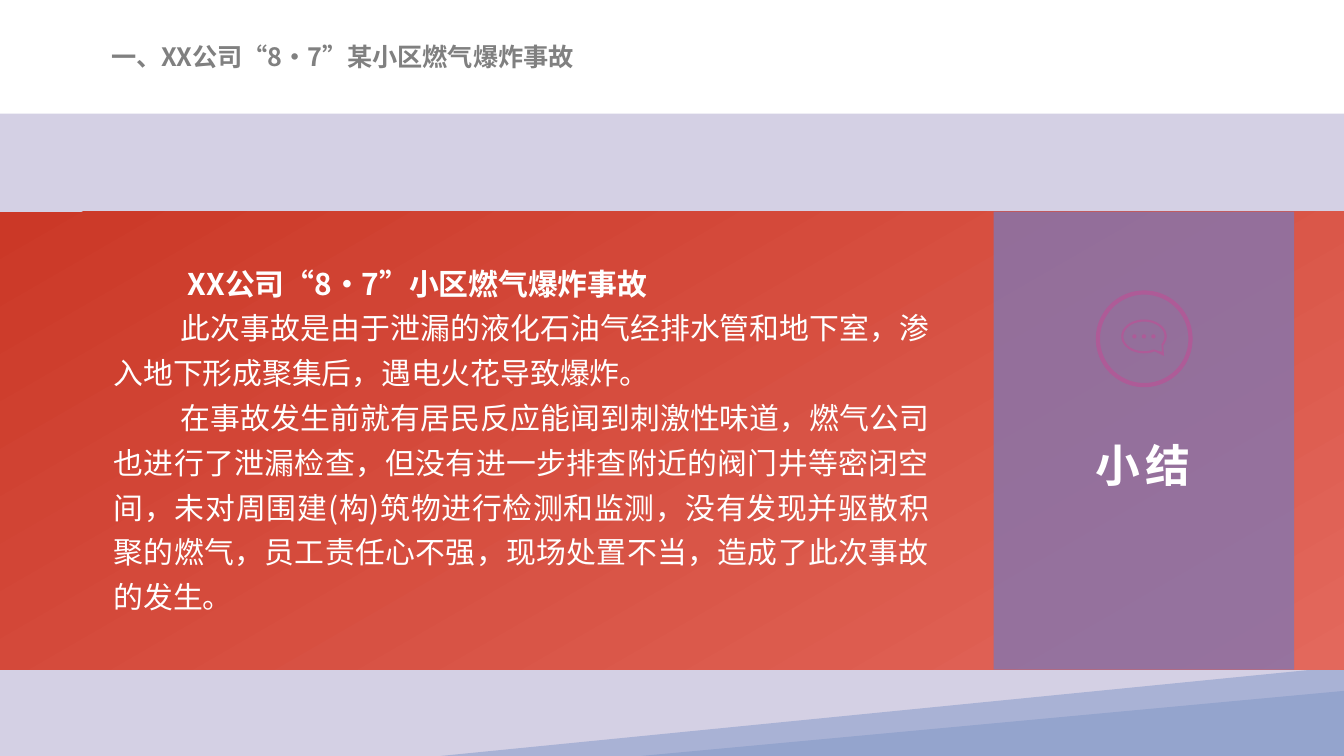
from dataclasses import dataclass
from math import cos, radians, sin

from lxml import etree
from pptx import Presentation, util as u
from pptx.dml.color import RGBColor
from pptx.enum import shapes, text
from pptx.oxml import ns

WIDTH, HEIGHT = 25.4, 14.29


@dataclass(frozen=True)
class Theme:
    face: str = "Noto Sans CJK SC"
    white: str = "FFFFFF"
    heading: str = "808080"
    violet: str = "8376B0"
    plum: str = "AE5B97"
    pale_blue: str = "BED2E9"
    blue: str = "9DBCDD"
    red: str = "CB3827"
    coral: str = "E3685C"
    heading_size: float = 13.5
    body_size: float = 16
    label_size: float = 24


class Page:
    def __init__(self, slide, theme):
        self.slide, self.theme = slide, theme

    def paint(self, shape, color, alpha=100):
        shape.shadow.inherit = False
        shape.line.fill.background()
        shape.fill.solid()
        shape.fill.fore_color.rgb = RGBColor.from_string(color)
        if alpha < 100:
            tint = shape.fill._xPr.find(".//" + ns.qn("a:srgbClr"))
            etree.SubElement(tint, ns.qn("a:alpha"), val=str(alpha * 1000))
        return shape

    def block(self, box, color, alpha=100, kind=shapes.MSO_SHAPE.RECTANGLE):
        shape = self.slide.shapes.add_shape(kind, *map(u.Cm, box))
        return self.paint(shape, color, alpha)

    def gradient(self, box, colors, angle):
        panel = self.block(box, colors[0])
        panel.fill.gradient()
        panel.fill.gradient_angle = angle
        for stop, color, position in zip(panel.fill.gradient_stops, colors, (0, 1)):
            stop.color.rgb = RGBColor.from_string(color)
            stop.position = position

    def ring(self, box, color, weight):
        circle = self.block(box, color, kind=shapes.MSO_SHAPE.OVAL)
        circle.fill.background()
        circle.line.color.rgb = RGBColor.from_string(color)
        circle.line.width = u.Pt(weight)

    def outline(self, contours, color):
        builder = None
        for contour in contours:
            start, *rest = [(u.Cm(x), u.Cm(y)) for x, y in contour]
            if builder is None:
                builder = self.slide.shapes.build_freeform(*start)
            else:
                builder.move_to(*start)
            builder.add_line_segments(rest, close=True)
        self.paint(builder.convert_to_shape(), color)

    def words(self, box, lines, size, color, bold=(), spacing=None,
              indents=(), leading=None, wrap=True):
        frame = self.slide.shapes.add_textbox(*map(u.Cm, box)).text_frame
        frame.word_wrap = wrap
        for i, line in enumerate(lines):
            paragraph = frame.paragraphs[0] if i == 0 else frame.add_paragraph()
            paragraph.text = line
            if indents:
                paragraph.alignment = text.PP_ALIGN.JUSTIFY
                paragraph._p.get_or_add_pPr().set("indent", str(u.Cm(indents[i])))
            if leading:
                paragraph.line_spacing = u.Pt(leading)
            font = paragraph.font
            font.size, font.bold = u.Pt(size), i in bold
            font.color.rgb = RGBColor.from_string(color)
            font.name = self.theme.face
            defaults = paragraph._p.pPr.find(ns.qn("a:defRPr"))
            etree.SubElement(defaults, ns.qn("a:ea"), typeface=self.theme.face)
            if spacing:
                defaults.set("spc", str(spacing * 100))
        return frame


def arc(center, radii, first, last, step=10):
    (x, y), (rx, ry) = center, radii
    return [(x + rx * cos(radians(t)), y + ry * sin(radians(t)))
            for t in range(first, last, step)]


def speech_bubble(x, y):
    outer = arc((x, y), (0.43, 0.32), 62, 393) + [(x + 0.38, y + 0.37)]
    inner = arc((x, y), (0.39, 0.28), 62, 393) + [(x + 0.34, y + 0.29)]
    dots = [arc((x + shift, y), (0.04, 0.04), 0, 360, 30)
            for shift in (-0.18, 0, 0.18)]
    return [outer, inner, *dots]


def main():
    deck = Presentation()
    deck.slide_width, deck.slide_height = u.Cm(WIDTH), u.Cm(HEIGHT)
    theme = Theme()
    page = Page(deck.slides.add_slide(deck.slide_layouts[6]), theme)

    page.outline([[(WIDTH, 12.6), (WIDTH, 14.17), (17.09, HEIGHT), (8.33, HEIGHT)]],
                 theme.pale_blue)
    slope = page.block((12.12, 13.06, 13.28, 1.23), theme.blue,
                       kind=shapes.MSO_SHAPE.ISOSCELES_TRIANGLE)
    slope.adjustments[0] = 1
    page.block((0, 2.15, WIDTH, 12.14), theme.violet, alpha=34)

    heading = page.words((1.9, 0.69, 9.32, 0.76),
                         ["一、XX公司“8·7”某小区燃气爆炸事故"],
                         theme.heading_size, theme.heading, bold=(0,))
    heading.margin_left = heading.margin_right = u.Cm(0.2)
    heading.margin_top = heading.margin_bottom = u.Cm(0.1)

    page.gradient((0, 4, WIDTH, 8.66), (theme.red, theme.coral), 300)
    page.block((18.78, 4, 5.68, 8.66), theme.violet, alpha=80)
    page.ring((20.75, 5.53, 1.75, 1.75), theme.plum, 2.25)
    page.outline(speech_bubble(21.62, 6.36), theme.plum)

    page.words((1.9, 4.72, 15.93, 7.09), [
        "XX公司“8·7”小区燃气爆炸事故",
        "此次事故是由于泄漏的液化石油气经排水管和地下室，渗入地下形成聚集后，遇电火花导致爆炸。",
        "在事故发生前就有居民反应能闻到刺激性味道，燃气公司也进行了泄漏检查，"
        "但没有进一步排查附近的阀门井等密闭空间，未对周围建(构)筑物进行检测和监测，"
        "没有发现并驱散积聚的燃气，员工责任心不强，现场处置不当，造成了此次事故的发生。",
    ], theme.body_size, theme.white, bold=(0,), indents=(1.4, 1.27, 1.27), leading=24)
    page.words((20.45, 8.15, 2.41, 1.27), ["小结"], theme.label_size, theme.white,
               bold=(0,), spacing=3, wrap=False)

    deck.save("out.pptx")


if __name__ == "__main__":
    main()
